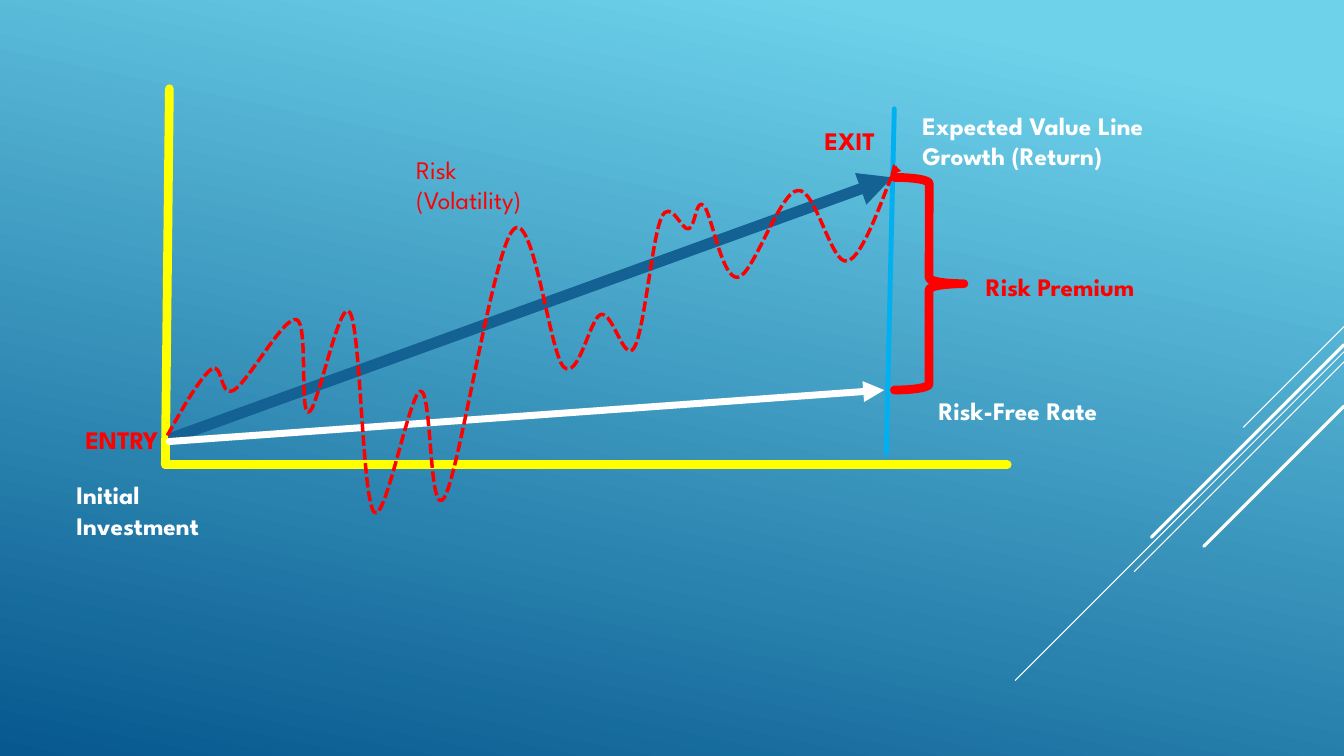
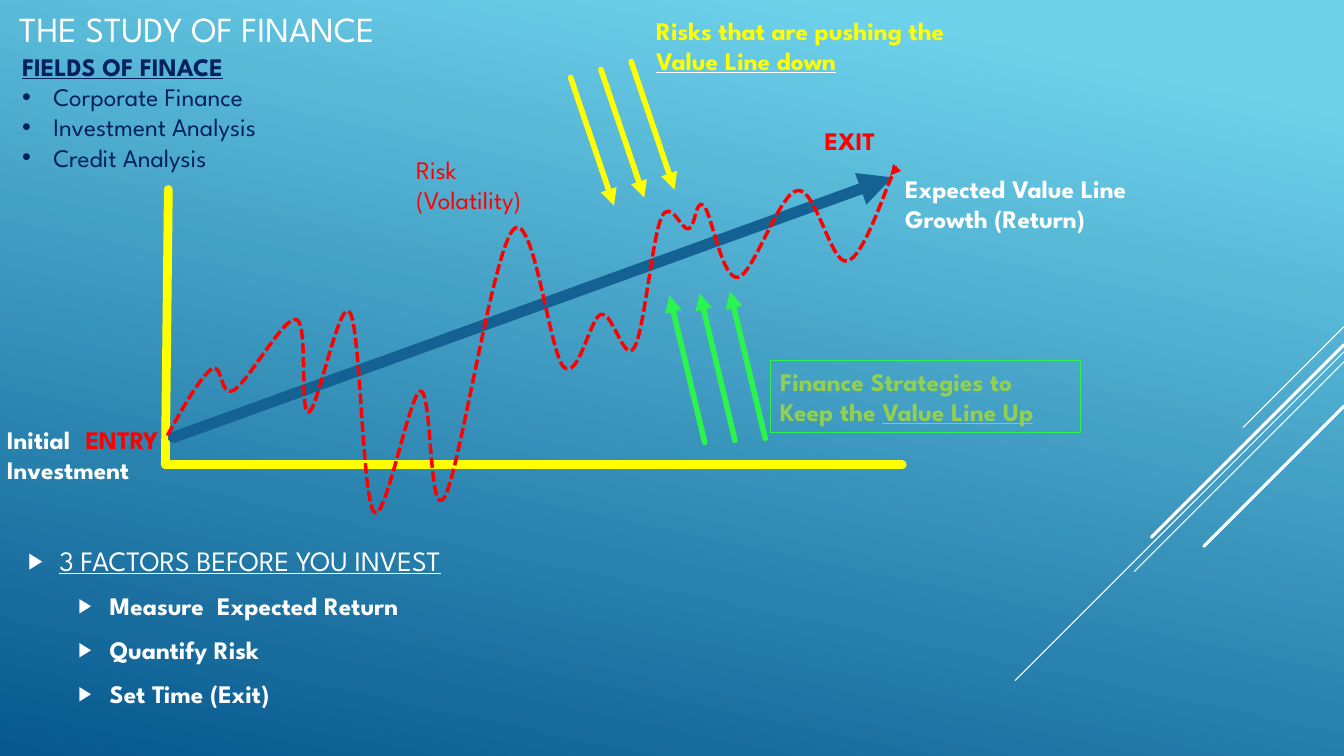
from dataclasses import dataclass

from lxml import etree
from pptx import Presentation
from pptx.dml.color import RGBColor
from pptx.enum.dml import MSO_LINE
from pptx.enum.shapes import MSO_CONNECTOR, MSO_SHAPE
from pptx.enum.text import MSO_ANCHOR, MSO_AUTO_SIZE, PP_ALIGN
from pptx.oxml.ns import qn
from pptx.util import Inches, Pt

STRAIGHT = MSO_CONNECTOR.STRAIGHT
RECT, BRACE = MSO_SHAPE.RECTANGLE, MSO_SHAPE.RIGHT_BRACE
DASH = MSO_LINE.SQUARE_DOT
LEFT = PP_ALIGN.LEFT
TOP, MIDDLE = MSO_ANCHOR.TOP, MSO_ANCHOR.MIDDLE
FIXED = MSO_AUTO_SIZE.NONE
TITLE_ONLY, BLANK = 5, 6
WIDE, HIGH = 13.33, 7.5


@dataclass(frozen=True)
class Theme:
    font: str = "League Spartan"
    sky: str = "6ED2EB"
    deep: str = "06588E"
    white: str = "FFFFFF"
    yellow: str = "FFFF00"
    red: str = "FF0000"
    blue: str = "146194"
    cyan: str = "00B0F0"
    navy: str = "002060"
    green: str = "2BF54D"
    lime: str = "92D050"
    title: float = 25.2
    head: float = 20
    body: float = 18
    thin: float = 0.75
    dash: float = 2.5
    arrow: float = 4
    thick: float = 6.25


THEME = Theme()

STREAKS = [(3.24, 1.0, 0.75), (3.49, 3.26, 0.75), (3.59, 2.08, 0.75),
           (3.42, 1.91, 2.25), (4.03, 1.39, 2.25)]

START = (1.66, 4.32)
BOUNDS = [(1.66, 1.67), (8.88, 5.08)]
CURVES = [
    (1.82, 4.03, 1.99, 3.74, 2.1, 3.66),
    (2.21, 3.59, 2.18, 3.95, 2.32, 3.87),
    (2.46, 3.79, 2.82, 3.13, 2.94, 3.17),
    (3.06, 3.2, 2.97, 4.1, 3.06, 4.09),
    (3.15, 4.08, 3.37, 2.93, 3.47, 3.1),
    (3.58, 3.26, 3.59, 4.94, 3.71, 5.08),
    (3.82, 5.21, 4.06, 3.9, 4.17, 3.88),
    (4.29, 3.86, 4.25, 5.2, 4.41, 4.93),
    (4.56, 4.67, 4.89, 2.49, 5.09, 2.28),
    (5.29, 2.06, 5.45, 3.5, 5.59, 3.64),
    (5.74, 3.78, 5.85, 3.15, 5.96, 3.12),
    (6.08, 3.09, 6.19, 3.61, 6.29, 3.45),
    (6.39, 3.29, 6.47, 2.35, 6.56, 2.16),
    (6.65, 1.96, 6.76, 2.29, 6.83, 2.27),
    (6.9, 2.25, 6.9, 1.96, 6.98, 2.04),
    (7.06, 2.12, 7.16, 2.78, 7.32, 2.75),
    (7.47, 2.73, 7.73, 1.91, 7.91, 1.89),
    (8.09, 1.86, 8.24, 2.62, 8.4, 2.59),
    (8.56, 2.57, 8.78, 1.88, 8.85, 1.74),
    (8.92, 1.59, 8.83, 1.74, 8.83, 1.74),
    (8.83, 1.74, 8.83, 1.74, 8.83, 1.74),
]


def inches(values):
    return [Inches(v) for v in values]


def bend(shape, curves):
    route = next(shape.element.iter(qn("a:path")))
    for part in route.findall(qn("a:lnTo")):
        route.remove(part)
    for curve in curves:
        part = etree.SubElement(route, qn("a:cubicBezTo"))
        spots = inches(curve)
        for x, y in zip(spots[::2], spots[1::2]):
            etree.SubElement(part, qn("a:pt"),
                             x=str(x - shape.left), y=str(y - shape.top))


def write(para, text, size=THEME.body, color=THEME.white, bold=False,
          under=False, rule=None):
    run = para.add_run()
    run.text = text
    font = run.font
    font.name, font.size = THEME.font, Pt(size)
    font.bold, font.underline = bold, under
    font.color.rgb = RGBColor.from_string(color)
    if rule:
        tint = etree.Element(qn("a:uFill"))
        solid = etree.SubElement(tint, qn("a:solidFill"))
        etree.SubElement(solid, qn("a:srgbClr"), val=rule)
        next(run._r.iter(qn("a:latin"))).addprevious(tint)


def bullet(para, mark, color, size=100, indent=0.31):
    props = para._p.get_or_add_pPr()
    props.set("marL", str(Inches(indent)))
    props.set("indent", str(Inches(-0.31)))
    tint = etree.SubElement(props, qn("a:buClr"))
    etree.SubElement(tint, qn("a:srgbClr"), val=color)
    etree.SubElement(props, qn("a:buSzPct"), val=str(size * 1000))
    etree.SubElement(props, qn("a:buFont"), typeface="Arial")
    etree.SubElement(props, qn("a:buChar"), char=mark)


class Deck:
    def __init__(self, theme):
        self.theme = theme
        self.show = Presentation()
        self.show.slide_width, self.show.slide_height = inches((WIDE, HIGH))
        fill = self.show.slide_master.background.fill
        fill.gradient()
        fill.gradient_angle = 258
        stops = zip(fill.gradient_stops, (theme.sky, theme.deep), (0.1, 1))
        for stop, color, place in stops:
            stop.color.rgb = RGBColor.from_string(color)
            stop.position = place
        self.slide = None

    def page(self, title=None):
        layout = self.show.slide_layouts[TITLE_ONLY if title else BLANK]
        self.slide = self.show.slides.add_slide(layout)
        for y, run, width in STREAKS:
            self.line((WIDE, y), (WIDE - run, y + run), self.theme.white, width)
        if title:
            shape = self.slide.shapes.title
            self.place(shape, (0.09, 0.02, 8.68, 0.52))
            frame = shape.text_frame
            frame.auto_size, frame.vertical_anchor = FIXED, MIDDLE
            para = frame.paragraphs[0]
            para.alignment = LEFT
            write(para, title, size=self.theme.title)

    def place(self, shape, at):
        shape.left, shape.top, shape.width, shape.height = inches(at)

    def stroke(self, shape, color, width, tip=False, cap="rnd", dash=None):
        shape.line.color.rgb = RGBColor.from_string(color)
        shape.line.width = Pt(width)
        if dash:
            shape.line.dash_style = dash
        edge = next(shape.element.iter(qn("a:ln")))
        edge.set("cap", cap)
        if tip:
            etree.SubElement(edge, qn("a:tailEnd"), type="triangle")

    def line(self, start, end, color, width, tip=False):
        shape = self.slide.shapes.add_connector(STRAIGHT, *inches(start + end))
        self.stroke(shape, color, width, tip)
        etree.SubElement(shape.element.spPr, qn("a:effectLst"))

    def arrows(self, start, step, reach, color):
        for i in range(3):
            x, y = start[0] + i * step[0], start[1] + i * step[1]
            self.line((x, y), (x + reach[0], y + reach[1]),
                      color, self.theme.arrow, True)

    def shape(self, kind, at, color, width):
        shape = self.slide.shapes.add_shape(kind, *inches(at))
        shape.shadow.inherit = False
        shape.fill.background()
        self.stroke(shape, color, width)
        return shape

    def wave(self, color):
        pen = self.slide.shapes.build_freeform(*inches(START))
        pen.add_line_segments([inches(p) for p in BOUNDS], close=False)
        shape = pen.convert_to_shape()
        bend(shape, CURVES)
        shape.shadow.inherit = False
        shape.fill.background()
        self.stroke(shape, color, self.theme.dash, True, "flat", DASH)

    def text(self, at, *lines, shape=None, anchor=TOP, **style):
        shape = shape or self.slide.shapes.add_textbox(*inches(at))
        frame = shape.text_frame
        frame.word_wrap, frame.vertical_anchor = True, anchor
        for i, words in enumerate(lines):
            para = frame.add_paragraph() if i else frame.paragraphs[0]
            para.alignment = LEFT
            write(para, words, **style)
        return frame

    def axes(self, top, right):
        base = (1.64, 4.61)
        color, width = self.theme.yellow, self.theme.thick
        self.line(top, base, color, width)
        self.line((right, base[1]), base, color, width)
        self.line((1.72, 4.34), (8.85, 1.76), self.theme.blue, 8, True)

    def market(self):
        red = self.theme.red
        self.text((8.08, 1.19, 1.53, 0.4), "EXIT", color=red, bold=True)
        self.text((0.75, 4.16, 1.53, 0.4), "ENTRY", color=red, bold=True)
        self.wave(red)
        self.text((4.03, 1.48, 1.51, 0.71), "Risk (Volatility)", color=red)

    def labels(self, growth, entry):
        self.text((*growth, 2.92, 0.71),
                  "Expected Value Line Growth (Return)", bold=True)
        self.text((*entry, 2.92, 0.71), "Initial", "Investment", bold=True)


def premium(deck):
    theme = deck.theme
    deck.page()
    deck.axes((1.68, 0.88), 9.99)
    deck.line((1.68, 4.38), (8.77, 3.87), theme.white, 5, True)
    deck.labels((9.05, 1.04), (0.66, 4.71))
    deck.line((8.87, 1.08), (8.79, 4.5), theme.cyan, 3.5)
    deck.text((9.21, 3.87, 2.92, 0.4), "Risk-Free Rate", bold=True)
    deck.shape(BRACE, (8.87, 1.76, 0.69, 2.11), theme.red, theme.thick)
    deck.text((9.68, 2.64, 2.92, 0.4), "Risk Premium",
              color=theme.red, bold=True)
    deck.market()


def study(deck):
    theme = deck.theme
    deck.page("THE STUDY OF FINANCE")
    deck.axes((1.67, 1.88), 8.95)
    deck.labels((8.88, 1.67), (-0.03, 4.16))
    deck.market()

    plan = deck.text((0.18, 4.94, 4.98, 2.54), "3 FACTORS BEFORE YOU INVEST",
                     anchor=MIDDLE, size=theme.head, under=True)
    for words in ("Measure  Expected Return", "Quantify Risk", "Set Time (Exit)"):
        para = plan.add_paragraph()
        para.level = 1
        write(para, words, bold=True)
    for para in plan.paragraphs:
        para.space_before, para.space_after = Pt(3.6), Pt(6)
        bullet(para, "▶", theme.white, 80, 0.81 if para.level else 0.31)

    fields = deck.text((0.12, 0.46, 3.08, 1.62), "FIELDS OF FINACE",
                       color=theme.navy, bold=True, under=True)
    for words in ("Corporate Finance", "Investment Analysis", "Credit Analysis"):
        para = fields.add_paragraph()
        write(para, words, color=theme.navy)
        bullet(para, "•", theme.navy)

    deck.arrows((5.66, 0.77), (0.3, -0.08), (0.43, 1.27), theme.yellow)
    deck.arrows((6.99, 4.39), (0.3, -0.02), (-0.35, -1.46), theme.green)

    at = (7.64, 3.58, 3.08, 0.71)
    frame = deck.text(at, "Finance Strategies to Keep the ", anchor=MIDDLE,
                      shape=deck.shape(RECT, at, theme.green, theme.thin),
                      color=theme.lime, bold=True)
    write(frame.paragraphs[0], "Value Line Up",
          color=theme.lime, bold=True, under=True)
    frame = deck.text((6.41, 0.1, 3.22, 0.71), "Risks that are pushing the ",
                      color=theme.yellow, bold=True)
    write(frame.paragraphs[0], "Value Line down", color=theme.yellow,
          bold=True, under=True, rule=theme.white)


def main():
    deck = Deck(THEME)
    premium(deck)
    study(deck)
    deck.show.save("out.pptx")


if __name__ == "__main__":
    main()
